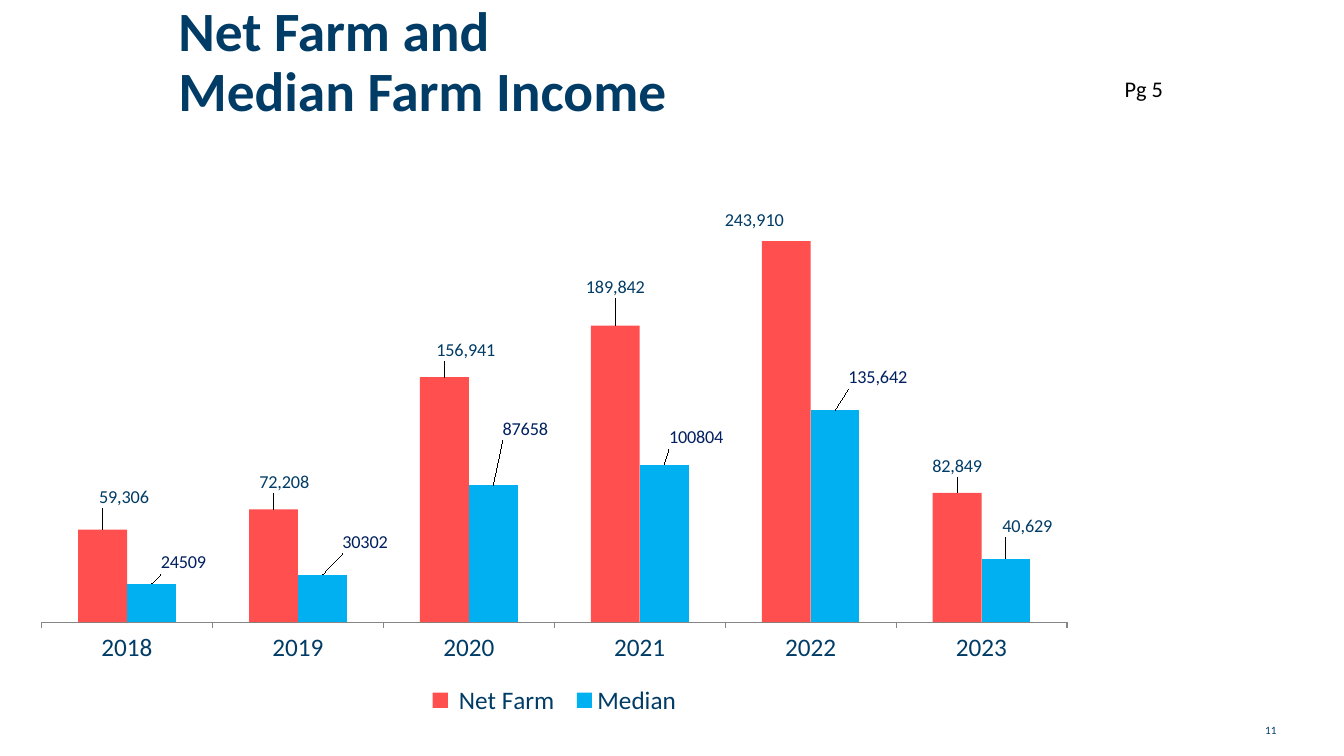
from dataclasses import dataclass

from lxml.etree import SubElement
from pptx import Presentation
from pptx.chart.data import CategoryChartData
from pptx.dml.color import RGBColor as RGB
from pptx.enum.chart import (XL_CHART_TYPE as Kind, XL_LABEL_POSITION as LabelPos,
                             XL_LEGEND_POSITION as LegendPos, XL_TICK_LABEL_POSITION as TickPos,
                             XL_TICK_MARK as Tick)
from pptx.enum.text import MSO_ANCHOR as Anchor, MSO_AUTO_SIZE as AutoSize, PP_ALIGN as Align
from pptx.oxml import parse_xml
from pptx.oxml.ns import qn
from pptx.util import Cm, Pt

TITLE = "Net Farm and \vMedian Farm Income"
YEARS = ["2018", "2019", "2020", "2021", "2022", "2023"]
INCOME = {
    " Net Farm ": [59306, 72208, 156941, 189842, 243910, 82849],
    "Median": [24509, 30302, 87658, 100804, 135642, 40629],
}
# Label shifts from the bar end, as fractions of the chart's width and height
SHIFTS = {
    " Net Farm ": [(.02, -.03), (.01, -.02), (.02, -.02), (0, -.04), (-.03, -.01), (0, -.02)],
    "Median": [(.03, -.01), (.04, -.03), (.03, -.07), (.03, -.02), (.04, -.03), (.02, -.03)],
}
UNGROUPED = {("Median", i) for i in range(4)}  # labels typed without a comma
NAVY_LABELS = {("Median", i) for i in range(5)}

TITLE_BOX = (4.24, 0.43, 18.85, 2.34)
CHART_BOX = (0.51, 3.58, 26.92, 14.58)
# text, box, size name, colour name, alignment, wrap
NOTES = [
    ("Pg 5", (26.59, 1.78, 2.97, 0.94), "note", "black", Align.RIGHT, True),
    ("11", (31.6, 18.11, 0.86, 0.61), "number", "blue", Align.CENTER, False),
]


@dataclass(frozen=True)
class Theme:
    font: str = "Calibri"
    blue: RGB = RGB(0x00, 0x3C, 0x66)
    navy: RGB = RGB(0x00, 0x20, 0x60)
    black: RGB = RGB(0, 0, 0)
    grey: RGB = RGB(0x86, 0x86, 0x86)
    bars: tuple = ((RGB(0xFF, 0, 0), 69), (RGB(0, 0xB0, 0xF0), 100))
    title: float = 39.6
    note: float = 16
    number: float = 8
    axis: float = 18
    label: float = 13


theme = Theme()


def style(font, size, color, bold=False):
    for key, value in dict(name=theme.font, size=Pt(size), bold=bold).items():
        setattr(font, key, value)
    font.color.rgb = color


def place(sp, box):
    for key, value in zip(("left", "top", "width", "height"), box):
        setattr(sp, key, Cm(value))


def manual_layout(**values):
    """Chart layout element; the keywords are its child tags in schema order."""
    layout = parse_xml('<c:layout xmlns:c="http://schemas.openxmlformats.org/'
                       'drawingml/2006/chart"><c:manualLayout/></c:layout>')
    for tag, value in values.items():
        SubElement(layout[0], qn("c:" + tag)).set("val", str(value))
    return layout


def add_title(slide):
    sp = slide.shapes.title
    place(sp, TITLE_BOX)
    tf = sp.text_frame
    tf.text = TITLE
    for key, value in dict(auto_size=AutoSize.NONE, vertical_anchor=Anchor.MIDDLE,
                           word_wrap=True).items():
        setattr(tf, key, value)
    p = tf.paragraphs[0]
    p.alignment, p.line_spacing = Align.LEFT, 0.9
    for r in p.runs:
        style(r.font, theme.title, theme.blue, True)


def add_note(slide, text, box, size, color, align, wrap):
    tf = slide.shapes.add_textbox(*map(Cm, box)).text_frame
    tf.word_wrap = wrap
    p = tf.paragraphs[0]
    p.alignment = align
    r = p.add_run()
    r.text = text
    style(r.font, getattr(theme, size), getattr(theme, color))


def format_axes(chart):
    years, income = chart.category_axis, chart.value_axis
    years.major_tick_mark, years.minor_tick_mark = Tick.OUTSIDE, Tick.NONE
    years.tick_label_position = TickPos.LOW
    years.format.line.color.rgb = theme.grey
    style(years.tick_labels.font, theme.axis, theme.blue)
    for key, value in dict(minimum_scale=0, maximum_scale=300000, major_unit=100000,
                           has_major_gridlines=False, visible=False).items():
        setattr(income, key, value)


def format_series(series, color, opacity):
    series.format.fill.solid()
    series.format.fill.fore_color.rgb = color
    if opacity < 100:
        rgb = series.format.fill._xPr.find(".//" + qn("a:srgbClr"))
        SubElement(rgb, qn("a:alpha")).set("val", str(opacity * 1000))
    labels = series.data_labels
    for key, value in dict(show_value=True, number_format="#,##0",
                           number_format_is_linked=False,
                           position=LabelPos.OUTSIDE_END).items():
        setattr(labels, key, value)
    style(labels.font, theme.label, theme.blue)
    for i, (x, y) in enumerate(SHIFTS[series.name]):
        key = series.name, i
        label = series.points[i].data_label
        color = theme.navy if key in NAVY_LABELS else theme.blue
        if key in UNGROUPED:
            r = label.text_frame.paragraphs[0].add_run()
            r.text = str(INCOME[series.name][i])
            style(r.font, theme.label, color)
        else:
            style(label.font, theme.label, color)
        label.position = LabelPos.OUTSIDE_END
        label._dLbl.insert(1, manual_layout(x=x, y=y))


def add_income_chart(slide):
    data = CategoryChartData(number_format="#,##0")
    data.categories = YEARS
    for name, values in INCOME.items():
        data.add_series(name, values)
    chart = slide.shapes.add_chart(Kind.COLUMN_CLUSTERED, *map(Cm, CHART_BOX), data).chart
    style(chart.font, theme.axis, theme.blue)
    chart.has_title = False
    chart.has_legend = True
    chart.legend.position = LegendPos.BOTTOM
    chart.legend.include_in_layout = False
    style(chart.legend.font, theme.axis, theme.blue)
    plot = chart.plots[0]
    plot.gap_width, plot.overlap, plot.vary_by_categories = 150, 0, False
    area = chart._chartSpace.chart.plotArea
    for layout in area.findall(qn("c:layout")):
        area.remove(layout)
    area.insert(0, manual_layout(layoutTarget="inner", xMode="edge", yMode="edge",
                                 x=0.02, y=0.02, w=0.96, h=0.81))
    format_axes(chart)
    for series, bar in zip(plot.series, theme.bars):
        format_series(series, *bar)


def main():
    prs = Presentation()
    prs.slide_width, prs.slide_height = Cm(33.87), Cm(19.05)
    slide = prs.slides.add_slide(prs.slide_layouts[5])
    add_title(slide)
    for note in NOTES:
        add_note(slide, *note)
    add_income_chart(slide)
    prs.save("out.pptx")


if __name__ == "__main__":
    main()
